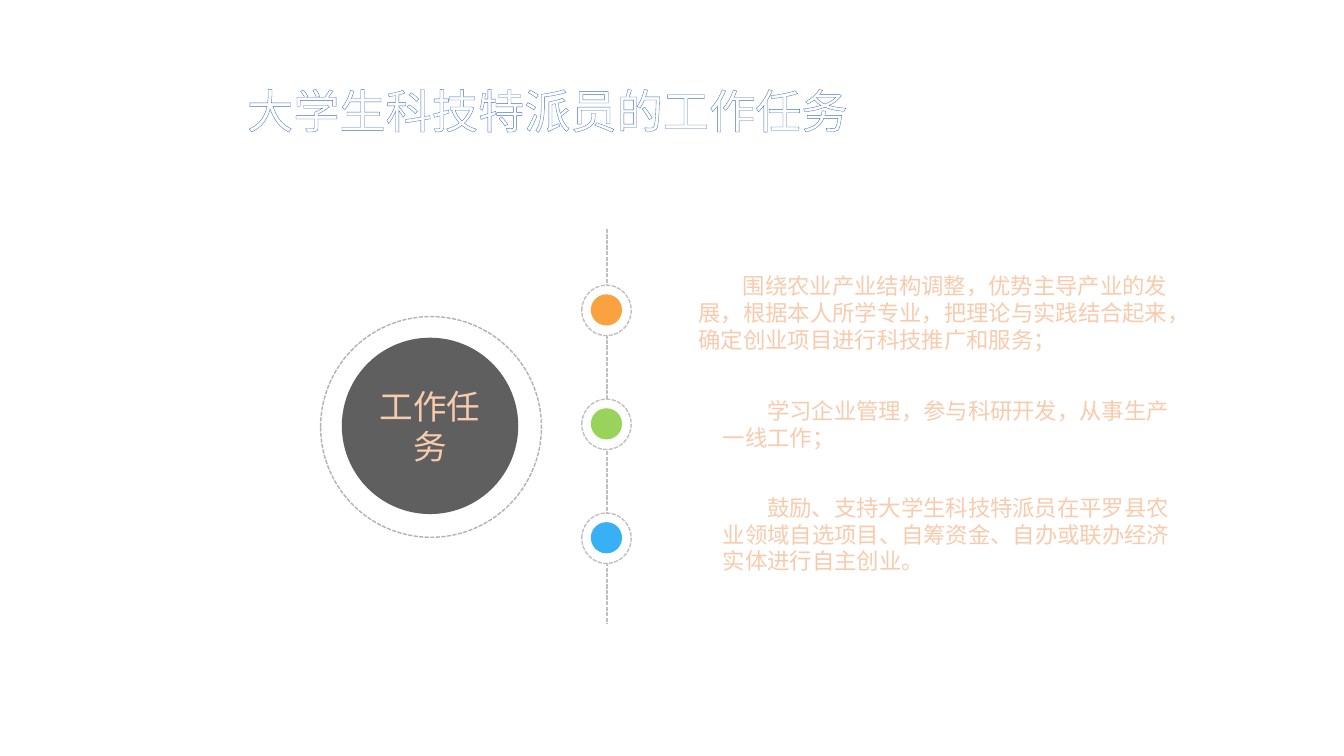
"""Build the slide on the tasks of student science envoys."""
from dataclasses import dataclass

from lxml import etree
from pptx import Presentation
from pptx.dml.color import RGBColor
from pptx.enum.dml import MSO_LINE
from pptx.enum.shapes import MSO_CONNECTOR, MSO_SHAPE
from pptx.enum.text import MSO_ANCHOR, MSO_AUTO_SIZE, PP_ALIGN
from pptx.oxml.ns import qn
from pptx.util import Inches, Pt

OVAL = MSO_SHAPE.OVAL
STRAIGHT = MSO_CONNECTOR.STRAIGHT
DASH = MSO_LINE.SQUARE_DOT
MIDDLE = MSO_ANCHOR.MIDDLE
TOP = MSO_ANCHOR.TOP
LEFT, CENTER = PP_ALIGN.LEFT, PP_ALIGN.CENTER
GROW, FIXED = MSO_AUTO_SIZE.SHAPE_TO_FIT_TEXT, MSO_AUTO_SIZE.NONE

LATIN, HAN = "Calibri", "Noto Sans CJK SC"
COLORS = {
    "white": "FFFFFF", "blue": "4472C4", "peach": "F8CBAD", "rust": "ED7D31",
    "dark": "5F5F5F", "ring": "B2B2B2", "rail": "C0C0C0",
    "orange": "FAA240", "green": "99D35B", "sky": "37B1F4",
}


@dataclass
class Task:
    text: str
    color: str
    left: float
    top: float
    width: float
    height: float


TASKS = [
    Task("围绕农业产业结构调整，优势主导产业的发展，根据本人所学专业，把理论与实践结合起来，"
         "确定创业项目进行科技推广和服务；", "orange", 6.83, 2.65, 4.89, 0.9),
    Task("学习企业管理，参与科研开发，从事生产一线工作；",
         "green", 7.07, 3.89, 4.78, 0.63),
    Task("鼓励、支持大学生科技特派员在平罗县农业领域自选项目、自筹资金、"
         "自办或联办经济实体进行自主创业。", "sky", 7.07, 4.85, 4.65, 0.9),
]
NODE_TOP, NODE_STEP = 2.83, 1.13


def tint(name: str) -> RGBColor:
    return RGBColor.from_string(COLORS[name])


def write(shape, text: str, *, size: float, font: str = HAN, color: str = "peach",
          edge: str = "rust", weight: float = 1.75, align=LEFT, anchor=TOP,
          fit=FIXED, indent: float = 0, inset: float | None = None,
          spacing: float | None = None) -> None:
    frame = shape.text_frame
    frame.word_wrap = True
    frame.auto_size = fit
    frame.vertical_anchor = anchor
    if inset is not None:
        frame.margin_left = frame.margin_right = Inches(inset)
        frame.margin_top = frame.margin_bottom = Inches(inset)
    para = frame.paragraphs[0]
    para.alignment = align
    para.line_spacing = spacing
    if indent:
        props = para._p.get_or_add_pPr()
        props.set("marL", "0")
        props.set("indent", str(Inches(indent)))
    run = para.add_run()
    run.text = text
    run.font.size = Pt(size)
    run.font.name = font
    run.font.color.rgb = tint(color)
    props = run._r.get_or_add_rPr()
    etree.SubElement(props, qn("a:ea")).set("typeface", LATIN)
    line = etree.Element(qn("a:ln"), w=str(Pt(weight)))
    fill = etree.SubElement(line, qn("a:solidFill"))
    etree.SubElement(fill, qn("a:srgbClr")).set("val", COLORS[edge])
    props.insert(0, line)


def dash(line, color: str) -> None:
    line.color.rgb = tint(color)
    line.width = Pt(1)
    line.dash_style = DASH


def disc(slide, left: float, top: float, width: float, height: float,
         fill: str, edge: str | None = None):
    shape = slide.shapes.add_shape(
        OVAL, Inches(left), Inches(top), Inches(width), Inches(height))
    shape.shadow.inherit = False
    shape.fill.solid()
    shape.fill.fore_color.rgb = tint(fill)
    if edge:
        dash(shape.line, edge)
    else:
        shape.line.fill.background()
    return shape


def head(slide) -> None:
    title = slide.shapes.title
    title.left, title.top = Inches(2.35), Inches(0.4)
    title.width, title.height = Inches(8.62), Inches(1.45)
    write(title, "大学生科技特派员的工作任务", size=33, font=LATIN, color="white",
          edge="blue", weight=0.8, anchor=MIDDLE, spacing=0.9)


def rail(slide) -> None:
    line = slide.shapes.add_connector(
        STRAIGHT, Inches(6.02), Inches(2.27), Inches(6.02), Inches(6.19))
    dash(line.line, "rail")
    etree.SubElement(line._element.spPr, qn("a:effectLst"))


def hub(slide) -> None:
    disc(slide, 3.18, 3.14, 2.19, 2.19, "white", "ring")
    core = disc(slide, 3.39, 3.35, 1.75, 1.75, "dark")
    write(core, "工作任务", size=24, align=CENTER, anchor=MIDDLE, inset=0)


def node(slide, top: float, color: str) -> None:
    disc(slide, 5.77, top, 0.49, 0.5, "white", "rail")
    disc(slide, 5.86, top + 0.09, 0.31, 0.31, color)


def note(slide, task: Task) -> None:
    box = slide.shapes.add_textbox(Inches(task.left), Inches(task.top),
                                   Inches(task.width), Inches(task.height))
    write(box, task.text, size=16, fit=GROW, indent=0.44)


def main() -> None:
    deck = Presentation()
    deck.slide_width, deck.slide_height = Inches(13.33), Inches(7.5)
    slide = deck.slides.add_slide(deck.slide_layouts[5])
    head(slide)
    rail(slide)
    hub(slide)
    for i, task in enumerate(TASKS):
        node(slide, NODE_TOP + i * NODE_STEP, task.color)
        note(slide, task)
    deck.save("out.pptx")


if __name__ == "__main__":
    main()
